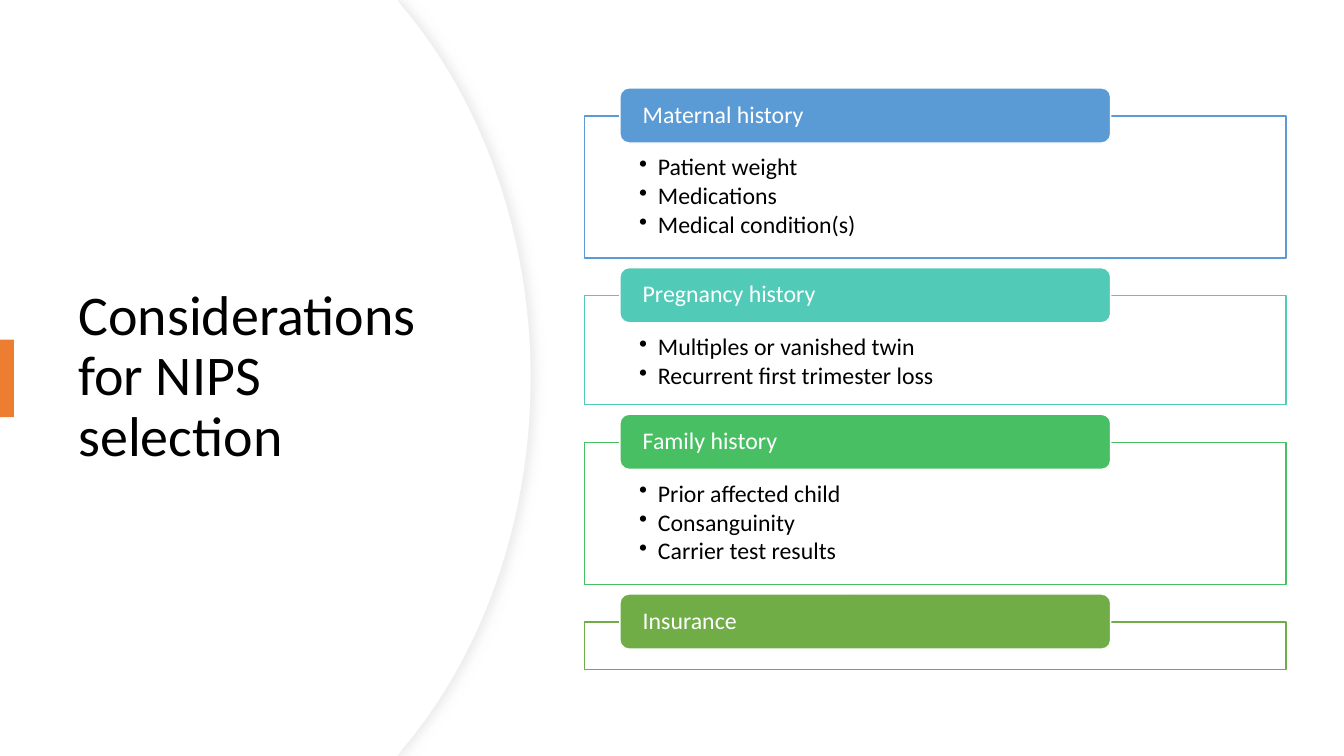
"""Build a slide on the considerations for NIPS selection."""
from lxml import etree
from pptx import Presentation
from pptx.dml.color import RGBColor
from pptx.enum import shapes, text
from pptx.oxml import ns
from pptx.util import Pt

TITLE = "Considerations for NIPS selection"
SECTIONS = [
    ("Maternal history", "blue", 101.5, ["Patient weight", "Medications", "Medical condition(s)"]),
    ("Pregnancy history", "teal", 77.8, ["Multiples or vanished twin", "Recurrent first trimester loss"]),
    ("Family history", "green", 101.5, ["Prior affected child", "Consanguinity", "Carrier test results"]),
    ("Insurance", "olive", 33.8, []),
]
COLORS = {
    "white": "FFFFFF", "black": "000000", "edge": "EFEFEF", "shade": "D9D9D9", "orange": "ED7D31",
    "blue": "5B9BD5", "teal": "52CAB8", "green": "49BF64", "olive": "70AD47",
}
FONT = "Calibri"
WIDTH, HEIGHT = 960, 540
ARC = [(283.7, 0), (288.7, 5.8), (344.9, 73.4), (379.4, 167), (379.4, 270)]
PANEL_LEFT, PANEL_TOP, PANEL_WIDTH, PANEL_GAP = 417.6, 82.8, 501.1, 26.9
TAB_LEFT, TAB_RISE, TAB_WIDTH, TAB_HEIGHT = 442.8, 20, 350.6, 39.4
PANEL_INSETS = (38.9, 28.1, 38.9, 9.4)
TAB_INSETS = (14.4, 0, 14.4, 0)
TITLE_INSETS = (7.2, 3.6, 7.2, 3.6)


def add_xml(parent, tag, **attributes):
    return etree.SubElement(parent, ns.qn(tag), attributes)


def color(name):
    return RGBColor.from_string(COLORS[name])


def paint(shape, fill, line=None, weight=1):
    shape.shadow.inherit = False
    shape.fill.solid()
    shape.fill.fore_color.rgb = color(fill)
    if line:
        shape.line.color.rgb = color(line)
        shape.line.width = Pt(weight)
    else:
        shape.line.fill.background()


def add_block(page, kind, bounds, fill, line=None):
    shape = page.shapes.add_shape(kind, *map(Pt, bounds))
    paint(shape, fill, line)
    return shape


def write(shape, lines, size, ink, insets, anchor, after=0, bullets=False):
    frame = shape.text_frame
    sides = ("margin_left", "margin_top", "margin_right", "margin_bottom")
    settings = dict(zip(sides, map(Pt, insets)), word_wrap=True, vertical_anchor=anchor)
    for name, value in settings.items():
        setattr(frame, name, value)
    for index, line in enumerate(lines):
        para = frame.add_paragraph() if index else frame.paragraphs[0]
        layout = {"alignment": text.PP_ALIGN.LEFT, "line_spacing": 0.9, "space_after": Pt(after)}
        for name, value in layout.items():
            setattr(para, name, value)
        span = para.add_run()
        span.text = line
        for name, value in {"name": FONT, "size": Pt(size)}.items():
            setattr(span.font, name, value)
        span.font.color.rgb = color(ink)
        if bullets:
            properties = para._p.get_or_add_pPr()
            properties.set("marL", str(Pt(13.5)))
            properties.set("indent", str(Pt(-13.5)))
            add_xml(properties, "a:buChar", char="•")


def add_arc(page, shift=0):
    upper = [ARC[0]] + [(x - shift, y) for x, y in ARC[1:]]
    lower = [(x, HEIGHT - y) for x, y in reversed(upper[:-1])]
    builder = page.shapes.build_freeform(0, 0, scale=Pt(1))
    builder.add_line_segments(upper + lower + [(0, HEIGHT)], close=True)
    shape = builder.convert_to_shape()
    segments = shape._element.findall(".//" + ns.qn("a:lnTo"))
    for first in (2, 5):
        curve = etree.Element(ns.qn("a:cubicBezTo"))
        segments[first].addprevious(curve)
        for segment in segments[first:first + 3]:
            curve.append(segment[0])
            segment.getparent().remove(segment)
    return shape


def add_shadow(shape):
    effects = shape._element.spPr.find(ns.qn("a:effectLst"))
    shadow = add_xml(effects, "a:outerShdw", blurRad=str(Pt(7)), dist=str(Pt(3)), dir="0")
    shade = add_xml(shadow, "a:srgbClr", val=COLORS["shade"])
    add_xml(shade, "a:alpha", val="50000")


def add_section(page, top, heading, hue, height, items):
    panel = add_block(page, shapes.MSO_SHAPE.RECTANGLE,
                      (PANEL_LEFT, top, PANEL_WIDTH, height), "white", hue)
    fill = panel._element.spPr.find(ns.qn("a:solidFill"))
    add_xml(fill[0], "a:alpha", val="90000")
    write(panel, items, 17, "black", PANEL_INSETS, text.MSO_ANCHOR.TOP, after=2.3, bullets=True)
    tab = add_block(page, shapes.MSO_SHAPE.ROUNDED_RECTANGLE,
                    (TAB_LEFT, top - TAB_RISE, TAB_WIDTH, TAB_HEIGHT), hue, "white")
    write(tab, [heading], 17, "white", TAB_INSETS, text.MSO_ANCHOR.MIDDLE)


def main():
    deck = Presentation()
    deck.slide_width, deck.slide_height = Pt(WIDTH), Pt(HEIGHT)
    page = deck.slides.add_slide(deck.slide_layouts[6])

    rim = add_arc(page)
    paint(rim, "white", "edge", 0.75)
    add_shadow(rim)
    paint(add_arc(page, shift=0.7), "white")

    title = page.shapes.add_textbox(*map(Pt, (49, 91.4, 283.7, 356.4)))
    write(title, [TITLE], 40, "black", TITLE_INSETS, text.MSO_ANCHOR.MIDDLE)
    add_block(page, shapes.MSO_SHAPE.RECTANGLE, (0, 242.6, 10, 55.4), "orange")

    top = PANEL_TOP
    for heading, hue, height, items in SECTIONS:
        add_section(page, top, heading, hue, height, items)
        top += height + PANEL_GAP

    deck.save("out.pptx")


if __name__ == "__main__":
    main()
